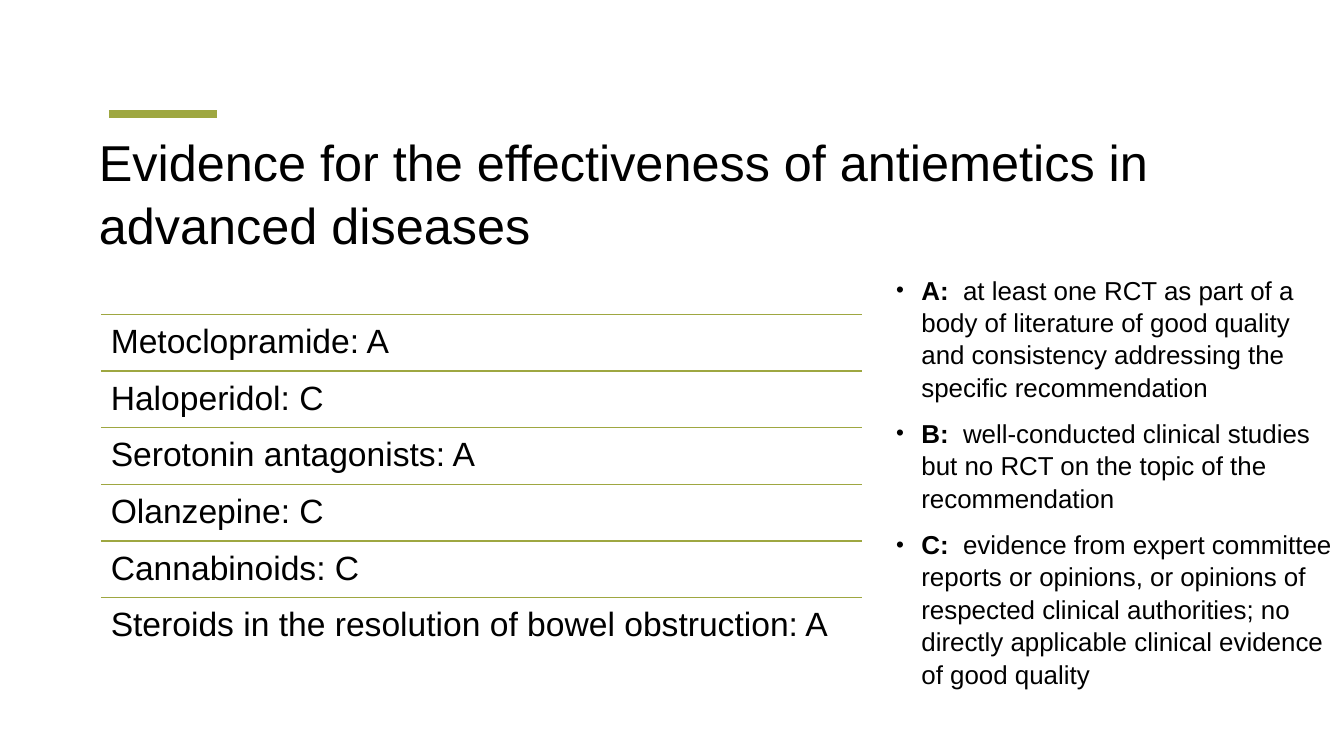
from lxml.etree import SubElement
from pptx import Presentation
from pptx.dml.color import RGBColor
from pptx.enum.shapes import MSO_CONNECTOR
from pptx.enum.text import MSO_ANCHOR, MSO_AUTO_SIZE, PP_ALIGN
from pptx.oxml.ns import qn
from pptx.util import Inches, Pt

BLACK = RGBColor(0x00, 0x00, 0x00)
OLIVE = RGBColor(0x9E, 0xA7, 0x41)
FONT = "Arial"
LEADING = 1.04

TITLE = "Evidence for the effectiveness of antiemetics in advanced diseases"
RATINGS = [
    ("Metoclopramide", "A"),
    ("Haloperidol", "C"),
    ("Serotonin antagonists", "A"),
    ("Olanzepine", "C"),
    ("Cannabinoids", "C"),
    ("Steroids in the resolution of bowel obstruction", "A"),
]
GRADES = [
    ("A", "at least one RCT as part of a body of literature of good quality "
          "and consistency addressing the specific recommendation"),
    ("B", "well-conducted clinical studies but no RCT on the topic of the "
          "recommendation"),
    ("C", "evidence from expert committee reports or opinions, or opinions of "
          "respected clinical authorities; no directly applicable clinical "
          "evidence of good quality"),
]


def add_rule(slide, left, top, width, weight):
    """Draw a horizontal olive line."""
    line = slide.shapes.add_connector(
        MSO_CONNECTOR.STRAIGHT, left, top, left + width, top)
    line.line.color.rgb = OLIVE
    line.line.width = Pt(weight)
    SubElement(line._element.spPr, qn("a:effectLst"))


def style(p, size, spacing):
    p.font.name = FONT
    p.font.size = Pt(size)
    p.font.color.rgb = BLACK
    p.alignment = PP_ALIGN.LEFT
    p.line_spacing = spacing


def add_bullet(p):
    """Give the paragraph a hanging bullet."""
    pPr = p._p.get_or_add_pPr()
    pPr.set("marL", str(Inches(0.25)))
    pPr.set("indent", str(-Inches(0.25)))
    size = pPr.makeelement(qn("a:buSzPct"), {"val": "87000"})
    font = pPr.makeelement(qn("a:buFont"), {"typeface": FONT})
    char = pPr.makeelement(qn("a:buChar"), {"char": "•"})
    at = list(pPr).index(pPr.find(qn("a:defRPr")))
    pPr[at:at] = [size, font, char]


def add_title(slide, left, top, width, height):
    add_rule(slide, left + Inches(0.2), top - Inches(0.09), Inches(1.07), 6)
    sp = slide.shapes.title
    sp.left, sp.top, sp.width, sp.height = left, top, width, height
    tf = sp.text_frame
    tf.text = TITLE
    tf.word_wrap = True
    tf.auto_size = MSO_AUTO_SIZE.NONE
    tf.vertical_anchor = MSO_ANCHOR.MIDDLE
    tf.margin_bottom = Inches(0.13)
    style(tf.paragraphs[0], 36, LEADING)


def add_ratings(slide, left, top, width, height):
    """Stack the drugs in equal rows, each under its own rule."""
    row = height // len(RATINGS)
    for i, (drug, grade) in enumerate(RATINGS):
        y = top + i * row
        add_rule(slide, left, y, width, 1)
        tf = slide.shapes.add_textbox(left, y, width, row).text_frame
        tf.word_wrap = True
        tf.margin_left = tf.margin_right = Inches(0.1)
        tf.margin_top = tf.margin_bottom = Inches(0.1)
        tf.text = f"{drug}: {grade}"
        style(tf.paragraphs[0], 24, 0.9)


def add_grades(slide, left, top, width, height):
    tf = slide.shapes.add_textbox(left, top, width, height).text_frame
    tf.word_wrap = True
    for i, (grade, meaning) in enumerate(GRADES):
        p = tf.add_paragraph() if i else tf.paragraphs[0]
        style(p, 18.5, LEADING)
        p.space_before = Pt(10 if i else 0)
        add_bullet(p)
        for text, bold in ((f"{grade}:  ", True), (meaning, False)):
            r = p.add_run()
            r.text = text
            r.font.bold = bold
            r.font.name = FONT
            r.font.size = Pt(18.5)
            r.font.color.rgb = BLACK


def main():
    prs = Presentation()
    prs.slide_width, prs.slide_height = Inches(13.33), Inches(7.5)
    slide = prs.slides.add_slide(prs.slide_layouts[5])
    add_title(slide, Inches(0.88), Inches(1.22), Inches(11.33), Inches(1.44))
    add_ratings(slide, Inches(1), Inches(3.12), Inches(7.55), Inches(3.37))
    add_grades(slide, Inches(8.79), Inches(2.66), Inches(4.54), Inches(4.22))
    prs.save("out.pptx")


if __name__ == "__main__":
    main()
